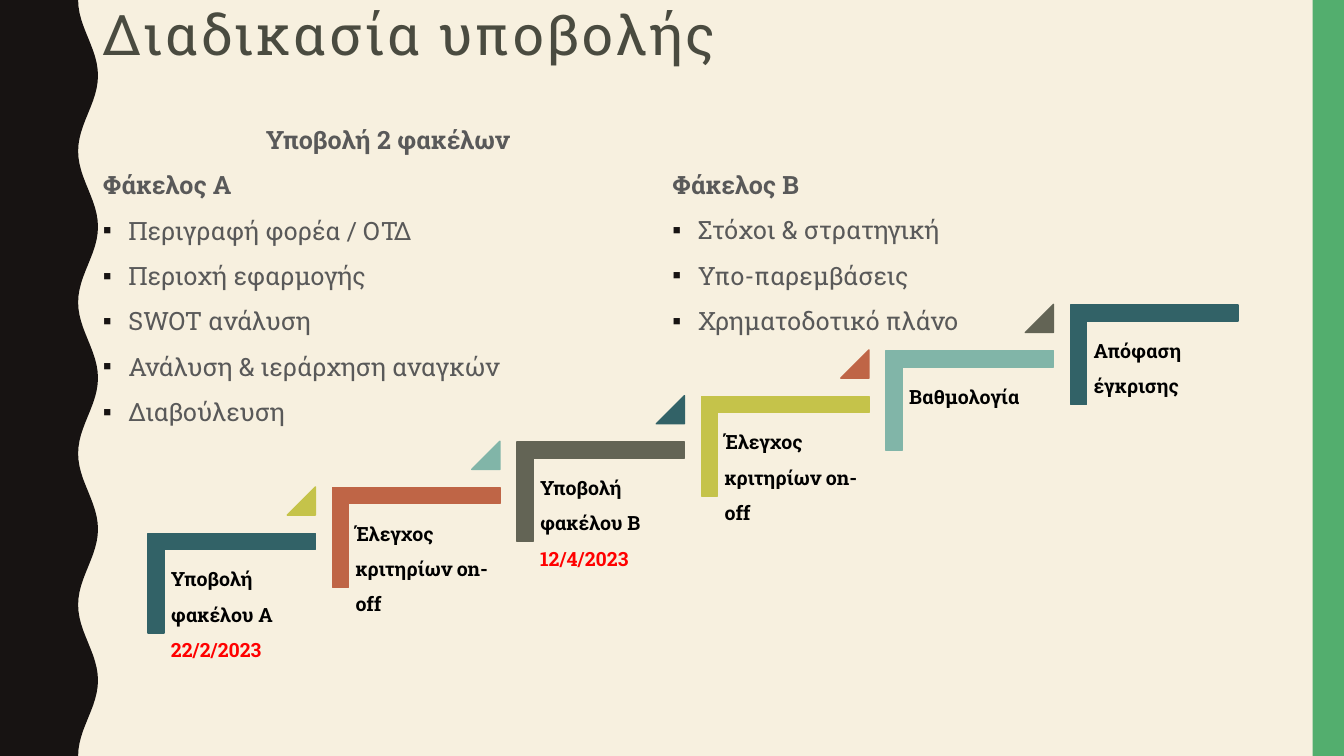
from math import cos, pi

from lxml.etree import SubElement
from pptx import Presentation
from pptx.dml.color import RGBColor
from pptx.enum.shapes import MSO_SHAPE
from pptx.enum.text import MSO_ANCHOR, MSO_AUTO_SIZE, PP_ALIGN
from pptx.oxml.ns import qn
from pptx.util import Cm, Pt

SLIDE_WIDTH, SLIDE_HEIGHT = 33.87, 19.05
BLACK, RED, GREY = "000000", "FF0000", "595959"
TEAL, RUST, OLIVE, LIME, MINT = "326267", "BF6546", "636455", "C5C34A", "81B5A8"
FOLDER_A = [
    "Περιγραφή φορέα / ΟΤΔ",
    "Περιοχή εφαρμογής",
    "SWOT ανάλυση",
    "Ανάλυση & ιεράρχηση αναγκών",
    "Διαβούλευση",
]
FOLDER_B = ["Στόχοι & στρατηγική", "Υπο-παρεμβάσεις", "Χρηματοδοτικό πλάνο"]
STEPS = [
    ("Υποβολή φακέλου Α ", "22/2/2023", TEAL, LIME),
    ("Έλεγχος κριτηρίων on-off", "", RUST, MINT),
    ("Υποβολή φακέλου Β ", "12/4/2023", OLIVE, TEAL),
    ("Έλεγχος κριτηρίων on-off", "", LIME, RUST),
    ("Βαθμολογία", "", MINT, OLIVE),
    ("Απόφαση έγκρισης", "", TEAL, None),
]


def color(value):
    """Turn a hex string into a colour."""
    return RGBColor.from_string(value)


def write(paragraph, text, size=18, ink=GREY, bold=False, tracking=0):
    """Add a formatted run to a paragraph."""
    run = paragraph.add_run()
    run.text = text
    run.font.name = "Roboto Slab"
    run.font.size = Pt(size)
    run.font.bold = bold
    run.font.color.rgb = color(ink)
    if tracking:
        run.font._element.set("spc", str(tracking * 100))


def place(item, left, top, width, height):
    """Move an item to a box given in centimetres."""
    item.left, item.top = Cm(left), Cm(top)
    item.width, item.height = Cm(width), Cm(height)


def paint(shape, fill, outlined=False):
    """Give a shape a flat fill and an optional matching outline."""
    shape.shadow.inherit = False
    shape.fill.solid()
    shape.fill.fore_color.rgb = color(fill)
    if outlined:
        shape.line.color.rgb = color(fill)
        shape.line.width = Pt(1)
    else:
        shape.line.fill.background()


def add_preset(slide, preset, fill, left, top, width, height, outlined=True):
    """Add a painted preset shape."""
    shape = slide.shapes.add_shape(preset, Cm(left), Cm(top), Cm(width), Cm(height))
    paint(shape, fill, outlined)
    return shape


def set_bullet(paragraph, bulleted):
    """Switch the square bullet of a paragraph on or off."""
    properties = paragraph._p.get_or_add_pPr()
    indent = Cm(0.64) if bulleted else 0
    properties.set("marL", str(indent))
    properties.set("indent", str(-indent))
    if bulleted:
        bullet_color = SubElement(properties, qn("a:buClr"))
        SubElement(bullet_color, qn("a:srgbClr")).set("val", "171312")
        SubElement(properties, qn("a:buChar")).set("char", "▪")
    else:
        SubElement(properties, qn("a:buNone"))


def add_edges(slide):
    """Draw the wavy left edge and the green right edge."""
    period, middle, swing, samples = 3.81, 2.22, 0.25, 120
    wave = []
    for index in range(samples + 1):
        height = SLIDE_HEIGHT * index / samples
        wave.append((Cm(middle - swing * cos(2 * pi * height / period)), Cm(height)))
    builder = slide.shapes.build_freeform(0, 0)
    builder.add_line_segments(wave + [(0, Cm(SLIDE_HEIGHT))])
    paint(builder.convert_to_shape(), "171312")
    green_width = 0.79
    add_preset(slide, MSO_SHAPE.RECTANGLE, "53AE6E", SLIDE_WIDTH - green_width, 0,
               green_width, SLIDE_HEIGHT, outlined=False)


def add_title(title, left, top, width, height):
    """Fill the title placeholder."""
    place(title, left, top, width, height)
    title.text_frame.vertical_anchor = MSO_ANCHOR.TOP
    title.text_frame.auto_size = MSO_AUTO_SIZE.NONE
    heading = title.text_frame.paragraphs[0]
    heading.alignment = PP_ALIGN.LEFT
    heading.line_spacing = 0.9
    write(heading, "Διαδικασία υποβολής", size=40, ink="4A4B40", tracking=2)


def add_folder(body, left, top, width, height, headings, contents):
    """Fill a body placeholder with bold headings and a bulleted list."""
    place(body, left, top, width, height)
    frame = body.text_frame
    frame.auto_size = MSO_AUTO_SIZE.NONE
    entries = headings + [(item, PP_ALIGN.JUSTIFY) for item in contents]
    for index, (text, alignment) in enumerate(entries):
        entry = frame.add_paragraph() if index else frame.paragraphs[0]
        is_heading = index < len(headings)
        entry.alignment = alignment
        entry.line_spacing = 1.5
        entry.space_before = entry.space_after = Pt(0)
        set_bullet(entry, not is_heading)
        write(entry, text, bold=is_heading)


def add_step(slide, left, top, width, height, stage, date, fill, marker_fill):
    """Draw one stair with its label and the marker towards the next one."""
    shift = (width - height) / 2
    stair = add_preset(slide, MSO_SHAPE.CORNER, fill, left + shift, top - shift, height, width)
    stair.rotation = 90
    stair.adjustments[0] = stair.adjustments[1] = 0.161

    label = slide.shapes.add_textbox(Cm(left + 0.43), Cm(top + 0.41), Cm(3.78), Cm(3.33))
    frame = label.text_frame
    frame.word_wrap = True
    frame.margin_left = frame.margin_right = Cm(0.15)
    frame.margin_top = frame.margin_bottom = Cm(0.15)
    caption = frame.paragraphs[0]
    caption.line_spacing = 1.5
    write(caption, stage, size=14, ink=BLACK, bold=True)
    if date:
        write(caption, date, size=14, ink=RED, bold=True)

    if marker_fill:
        side = 0.71
        marker = add_preset(slide, MSO_SHAPE.ISOSCELES_TRIANGLE, marker_fill,
                            left + width - side, top - 1.17, side, side)
        marker.adjustments[0] = 1


def add_staircase(slide, left, top, run, rise):
    """Draw the rising sequence of steps from its lowest stair."""
    for index, step in enumerate(STEPS):
        add_step(slide, left + index * run, top - index * rise, 4.22, 2.51, *step)


def main():
    """Build and save the slide."""
    deck = Presentation()
    deck.slide_width, deck.slide_height = Cm(SLIDE_WIDTH), Cm(SLIDE_HEIGHT)
    slide = deck.slides.add_slide(deck.slide_layouts[3])
    slide.background.fill.solid()
    slide.background.fill.fore_color.rgb = color("F7F0DF")
    title, folder_a, folder_b = slide.placeholders
    add_edges(slide)
    add_title(title, 2.34, 0.05, 29.21, 2.21)
    add_folder(folder_a, 2.34, 2.62, 14.86, 8.6,
               [("Υποβολή 2 φακέλων", PP_ALIGN.CENTER), ("Φάκελος Α", PP_ALIGN.JUSTIFY)],
               FOLDER_A)
    add_folder(folder_b, 16.69, 3.76, 14.86, 5,
               [("Φάκελος Β", PP_ALIGN.JUSTIFY)], FOLDER_B)
    add_staircase(slide, 3.73, 13.44, 4.65, 1.15)
    deck.save("out.pptx")


if __name__ == "__main__":
    main()
